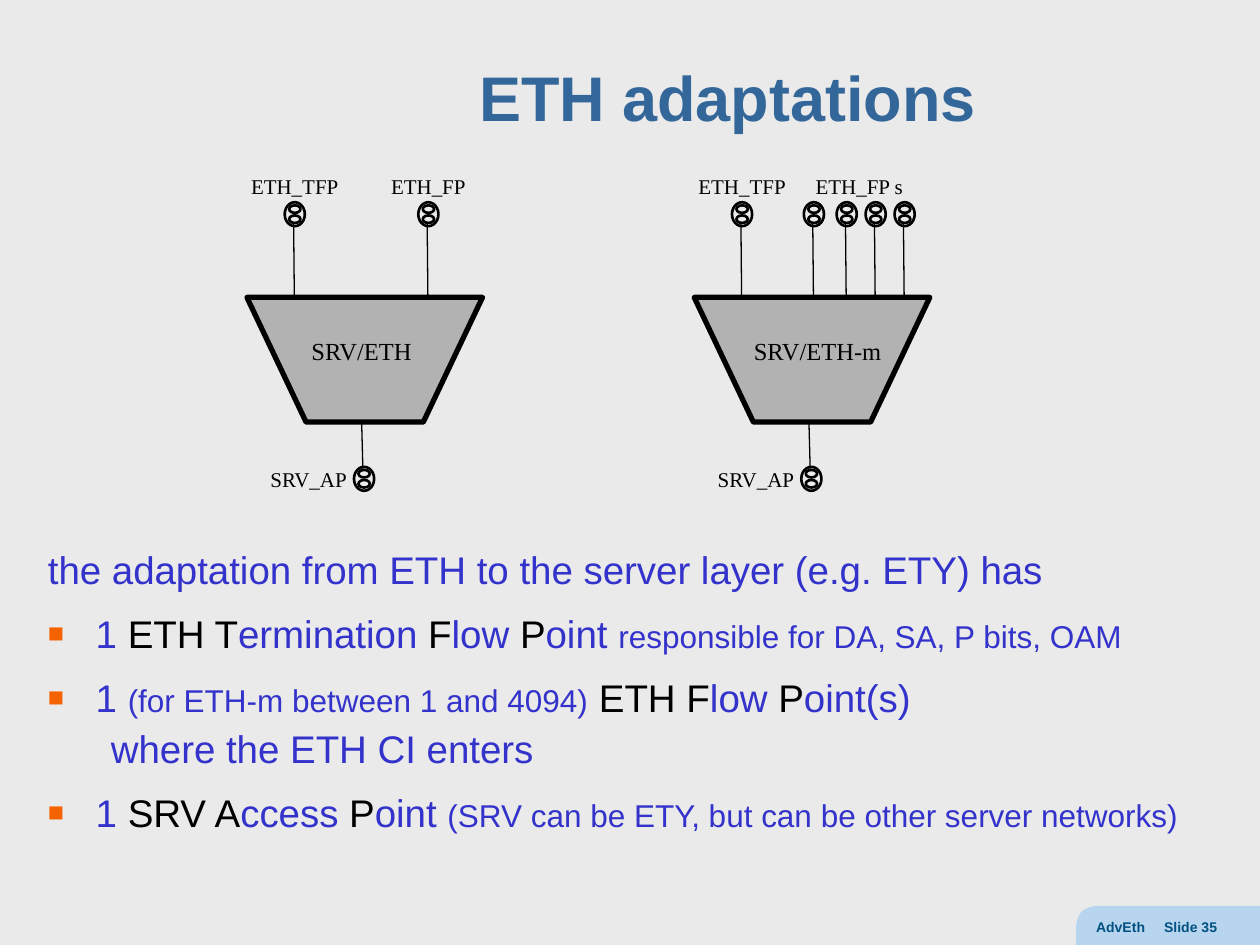
from lxml import etree
from pptx import Presentation
from pptx.dml.color import RGBColor
from pptx.enum.shapes import MSO_CONNECTOR, MSO_SHAPE
from pptx.enum.text import MSO_ANCHOR, MSO_AUTO_SIZE, PP_ALIGN
from pptx.oxml.ns import qn
from pptx.util import Inches, Pt

BACK, BLACK, BLUE, GREY = "EAEAEA", "000000", "3333CC", "B2B2B2"
TITLE = "ETH adaptations"

# Horizontal positions are measured from the left end of each trapezoid.
ADAPTATIONS = [
    dict(left=1.96, name="SRV/ETH", name_x=0.91,
         fp_label="ETH_FP", fp_label_x=1.44, fps=[1.44]),
    dict(left=5.51, name="SRV/ETH-m", name_x=0.98,
         fp_label="ETH_FP s", fp_label_x=1.31, fps=[0.95, 1.21, 1.44, 1.67]),
]
TFP_X, AP_X = 0.38, 0.93
TOP_Y, BOTTOM_Y = 1.7, 3.8
TRAPEZOID = [(0, 2.36), (0.47, 3.35), (1.4, 3.35), (1.87, 2.36)]
TAB_OUTLINE = [(10, 7.19), (10, 7.5), (8.54, 7.5), (8.54, 7.34), (8.55, 7.3),
               (8.57, 7.25), (8.6, 7.22), (8.65, 7.2), (8.69, 7.19)]

# Each paragraph is a style and its runs: text, size, colour.
BODY = [
    ("lead", [("the adaptation from ETH to the server layer (e.g. ETY) has", 22, BLUE)]),
    ("bullet", [("1 ", 22, BLUE), ("ETH T", 22, BLACK), ("ermination ", 22, BLUE),
                ("F", 22, BLACK), ("low ", 22, BLUE), ("P", 22, BLACK),
                ("oint ", 22, BLUE),
                ("responsible for DA, SA, P bits, OAM", 18, BLUE)]),
    ("bullet", [("1 ", 22, BLUE), ("(for ETH-m between 1 and 4094)", 18, BLUE),
                (" ", 22, BLUE), ("ETH F", 22, BLACK), ("low ", 22, BLUE),
                ("P", 22, BLACK), ("oint(s)", 22, BLUE)]),
    ("sub", [("where the ETH CI enters", 22, BLUE)]),
    ("bullet", [("1 ", 22, BLUE), ("SRV A", 22, BLACK), ("ccess ", 22, BLUE),
                ("P", 22, BLACK), ("oint ", 22, BLUE),
                ("(SRV can be ETY, but can be other server networks)", 18, BLUE)]),
]
# Style: level, left margin, first-line indent, line spacing, space before
STYLES = {"lead": (0, 0.38, -0.38, 1.2, 0),
          "bullet": (0, 0.38, -0.38, 1.2, 5),
          "sub": (1, 0.81, -0.31, 1.0, 2.5)}


def rgb(value):
    return RGBColor.from_string(value)


def place(sp, left, top, width, height):
    sp.left, sp.top = Inches(left), Inches(top)
    sp.width, sp.height = Inches(width), Inches(height)


def set_font(font, size, color, name="Arial", bold=False):
    font.name, font.size, font.bold = name, Pt(size), bold
    font.color.rgb = rgb(color)


def paint(sp, fill=None, line_width=None):
    sp.shadow.inherit = False
    if fill:
        sp.fill.solid()
        sp.fill.fore_color.rgb = rgb(fill)
    else:
        sp.fill.background()
    if line_width:
        sp.line.color.rgb = rgb(BLACK)
        sp.line.width = Pt(line_width)
    else:
        sp.line.fill.background()


def add_outline(s, points, fill, line_width=None, dx=0):
    pts = [(Inches(x + dx), Inches(y)) for x, y in points]
    builder = s.shapes.build_freeform(*pts[0])
    builder.add_line_segments(pts[1:], close=True)
    paint(builder.convert_to_shape(), fill, line_width)


def add_text(s, text, left, top, width, height):
    tf = s.shapes.add_textbox(Inches(left), Inches(top),
                              Inches(width), Inches(height)).text_frame
    tf.word_wrap = True
    tf.text = text
    return tf.paragraphs[0]


def add_label(s, text, cx, top, width=0.93, height=0.3, size=12):
    p = add_text(s, text, cx - width / 2, top, width, height)
    p.alignment = PP_ALIGN.CENTER
    set_font(p.runs[0].font, size, BLACK, "Times New Roman")


def add_wire(s, x, top, bottom):
    line = s.shapes.add_connector(MSO_CONNECTOR.STRAIGHT, Inches(x - 0.01), Inches(top),
                                  Inches(x), Inches(bottom))
    line.line.color.rgb = rgb(BLACK)
    line.line.width = Pt(0.75)
    etree.SubElement(line._element.spPr, qn("a:effectLst"))


def add_point(s, cx, cy):
    """Draw a connection point: two small rings inside a larger one."""
    group = s.shapes.add_group_shape()
    for dy, width, height, fill in [(-0.04, 0.09, 0.06, BACK), (0.04, 0.09, 0.06, BACK),
                                    (0, 0.16, 0.19, None)]:
        ring = group.shapes.add_shape(
            MSO_SHAPE.OVAL, Inches(cx - width / 2), Inches(cy + dy - height / 2),
            Inches(width), Inches(height))
        paint(ring, fill, 1.5)


def add_adaptation(s, left, name, name_x, fp_label, fp_label_x, fps):
    tops = [left + x for x in [TFP_X] + fps]
    ap = left + AP_X
    for x in tops:
        add_wire(s, x, 1.72, 2.78)
    add_wire(s, ap - 0.01, 3.33, 3.72)
    add_outline(s, TRAPEZOID, GREY, 3, dx=left)
    for x in tops:
        add_point(s, x, TOP_Y)
    add_point(s, ap, BOTTOM_Y)
    add_label(s, "ETH_TFP", left + TFP_X, 1.33)
    add_label(s, fp_label, left + fp_label_x, 1.33)
    add_label(s, "SRV_AP", left + 0.49, 3.65)
    add_label(s, name, left + name_x, 2.62, 1.26, 0.33, 14)


def add_bullet(p):
    pPr = p._p.get_or_add_pPr()
    color = etree.SubElement(pPr, qn("a:buClr"))
    etree.SubElement(color, qn("a:srgbClr"), val="F46300")
    etree.SubElement(pPr, qn("a:buSzPct"), val="70000")
    etree.SubElement(pPr, qn("a:buFont"), typeface="Arial")
    etree.SubElement(pPr, qn("a:buChar"), char="■")


def fill_body(tf):
    tf.auto_size = MSO_AUTO_SIZE.NONE
    for i, (style, runs) in enumerate(BODY):
        p = tf.paragraphs[0] if i == 0 else tf.add_paragraph()
        level, margin, indent, spacing, before = STYLES[style]
        pPr = p._p.get_or_add_pPr()
        pPr.set("marL", str(Inches(margin)))
        pPr.set("indent", str(Inches(indent)))
        if style == "bullet":
            add_bullet(p)
        else:
            etree.SubElement(pPr, qn("a:buNone"))
        p.level, p.line_spacing, p.space_before = level, spacing, Pt(before)
        for text, size, color in runs:
            r = p.add_run()
            r.text = text
            set_font(r.font, size, color)


def add_footer(s):
    add_outline(s, TAB_OUTLINE, "B7D5EF")
    p = add_text(s, "AdvEth\tSlide 35", 8.6, 7.24, 1.39, 0.25)
    tabs = etree.SubElement(p._p.get_or_add_pPr(), qn("a:tabLst"))
    etree.SubElement(tabs, qn("a:tab"), pos=str(Inches(0.54)), algn="l")
    for r in p.runs:
        set_font(r.font, 8, "005081", bold=True)


def main():
    prs = Presentation()
    prs.slide_width, prs.slide_height = Inches(10), Inches(7.5)
    s = prs.slides.add_slide(prs.slide_layouts[1])
    s.background.fill.solid()
    s.background.fill.fore_color.rgb = rgb(BACK)

    title, body = s.shapes.title, s.placeholders[1]
    place(title, 2.12, 0.18, 7.31, 1.25)
    tf = title.text_frame
    tf.text = TITLE
    tf.vertical_anchor = MSO_ANCHOR.MIDDLE
    p = tf.paragraphs[0]
    p.alignment, p.line_spacing = PP_ALIGN.CENTER, 0.9
    set_font(p.runs[0].font, 36, "336699", bold=True)

    place(body, 0.28, 4.21, 9.56, 2.89)
    fill_body(body.text_frame)
    for adaptation in ADAPTATIONS:
        add_adaptation(s, **adaptation)
    add_footer(s)
    prs.save("out.pptx")


if __name__ == "__main__":
    main()
